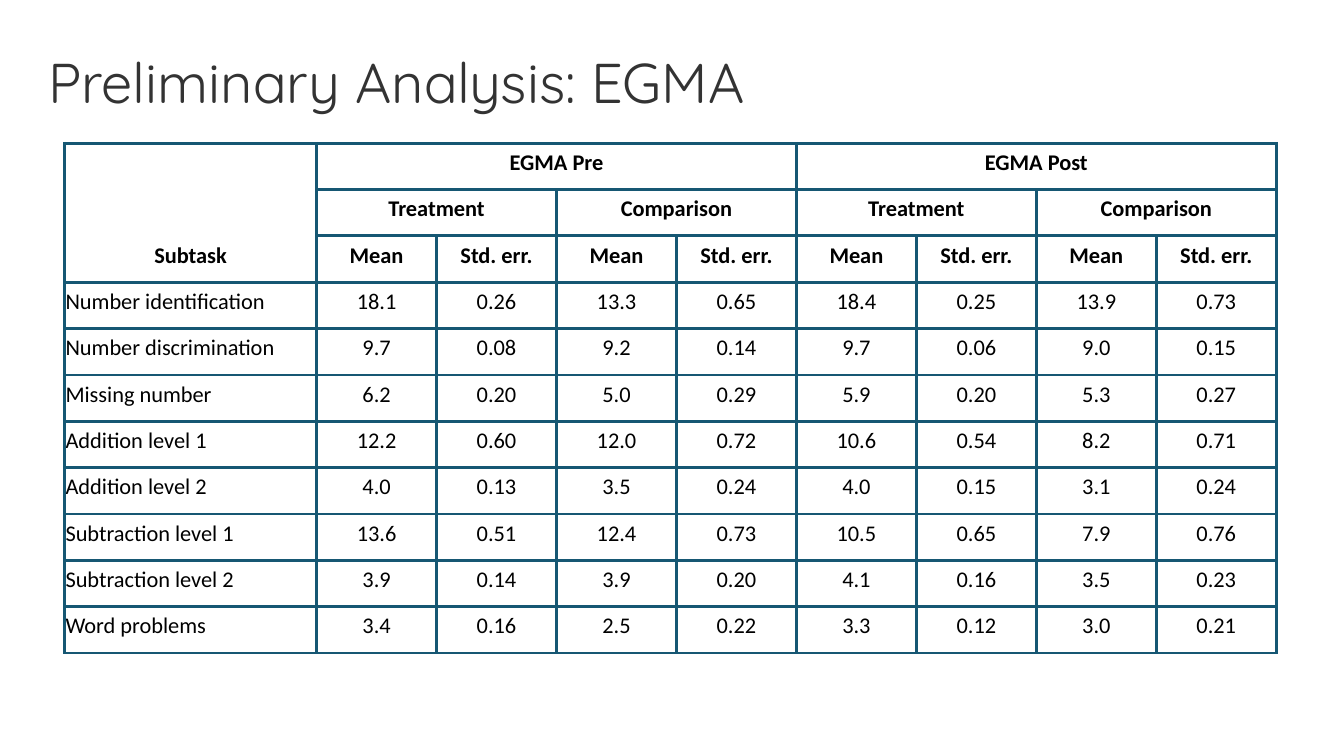
from lxml import etree
from pptx import Presentation
from pptx.dml.color import RGBColor
from pptx.enum.text import MSO_ANCHOR, PP_ALIGN
from pptx.oxml.ns import qn
from pptx.util import Inches, Pt

BOTTOM = MSO_ANCHOR.BOTTOM
LEFT, CENTER = PP_ALIGN.LEFT, PP_ALIGN.CENTER
BORDER = "165773"
HEADS = 3
ROW_HIGH = 0.46
WIDTHS = [2.5] + [1.19] * 8

ROWS = [
    ["Subtask", "EGMA Pre", "", "", "", "EGMA Post", "", "", ""],
    [""] + ["Treatment", "", "Comparison", ""] * 2,
    [""] + ["Mean", "Std. err."] * 4,
    ["Number identification", "18.1", "0.26", "13.3", "0.65", "18.4", "0.25", "13.9", "0.73"],
    ["Number discrimination", "9.7", "0.08", "9.2", "0.14", "9.7", "0.06", "9.0", "0.15"],
    ["Missing number", "6.2", "0.20", "5.0", "0.29", "5.9", "0.20", "5.3", "0.27"],
    ["Addition level 1", "12.2", "0.60", "12.0", "0.72", "10.6", "0.54", "8.2", "0.71"],
    ["Addition level 2", "4.0", "0.13", "3.5", "0.24", "4.0", "0.15", "3.1", "0.24"],
    ["Subtraction level 1", "13.6", "0.51", "12.4", "0.73", "10.5", "0.65", "7.9", "0.76"],
    ["Subtraction level 2", "3.9", "0.14", "3.9", "0.20", "4.1", "0.16", "3.5", "0.23"],
    ["Word problems", "3.4", "0.16", "2.5", "0.22", "3.3", "0.12", "3.0", "0.21"],
]


def add_text(para, text, font, size, color, bold=False):
    run = para.add_run()
    run.text = text
    run.font.name = font
    run.font.size = Pt(size)
    run.font.bold = bold
    run.font.color.rgb = RGBColor.from_string(color)


def add_borders(cell):
    props = cell._tc.get_or_add_tcPr()
    for side in ("lnL", "lnR", "lnT", "lnB"):
        line = etree.SubElement(props, qn("a:" + side), w=str(Pt(2.25)))
        fill = etree.SubElement(line, qn("a:solidFill"))
        etree.SubElement(fill, qn("a:srgbClr"), val=BORDER)


prs = Presentation()
prs.slide_width, prs.slide_height = Inches(13.33), Inches(7.5)
slide = prs.slides.add_slide(prs.slide_layouts[6])

# Title
title = slide.shapes.add_textbox(Inches(0.38), Inches(0.25), Inches(9.3), Inches(0.95))
frame = title.text_frame
frame.word_wrap = True
frame.vertical_anchor = BOTTOM
para = frame.paragraphs[0]
para.line_spacing = 0.9
add_text(para, "Preliminary Analysis: EGMA", "Quicksand", 40, "333333")

# Score table
table = slide.shapes.add_table(
    len(ROWS), len(WIDTHS), Inches(0.64), Inches(1.42),
    Inches(sum(WIDTHS)), Inches(ROW_HIGH * len(ROWS))).table
table.first_row = table.horz_banding = False
for col, width in zip(table.columns, WIDTHS):
    col.width = Inches(width)

for r, row in enumerate(ROWS):
    table.rows[r].height = Inches(ROW_HIGH)
    for c, text in enumerate(row):
        cell = table.cell(r, c)
        add_borders(cell)
        cell.fill.background()
        cell.vertical_anchor = BOTTOM
        cell.margin_left = cell.margin_right = cell.margin_top = Inches(0.01)
        cell.margin_bottom = Inches(0.13)
        if text:
            para = cell.text_frame.paragraphs[0]
            para.line_spacing = 1.15
            para.alignment = LEFT if c == 0 and r >= HEADS else CENTER
            add_text(para, text, "Calibri", 16, "000000", r < HEADS)

# Header spans
table.cell(0, 0).merge(table.cell(HEADS - 1, 0))
for r, span in enumerate((4, 2)):
    for c in range(1, len(WIDTHS), span):
        table.cell(r, c).merge(table.cell(r, c + span - 1))

prs.save("out.pptx")
